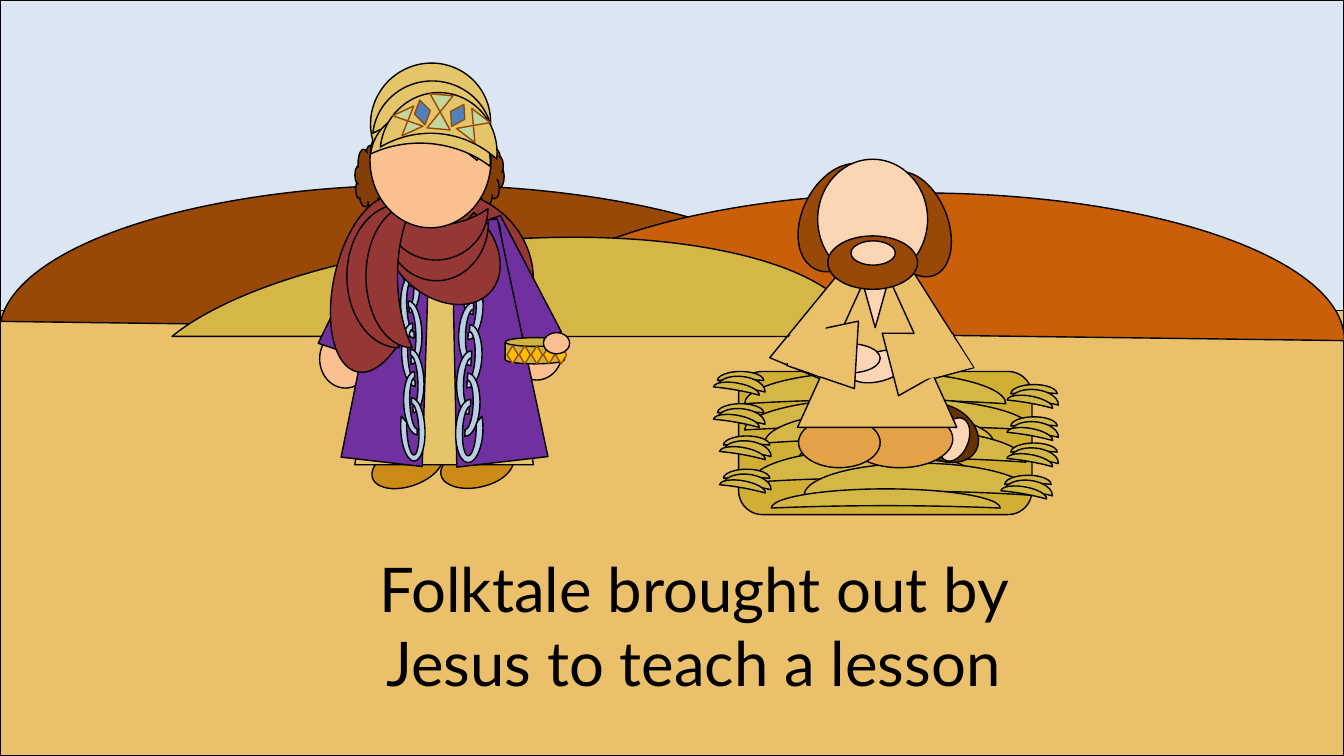
from dataclasses import dataclass

from pptx import Presentation
from pptx.dml.color import RGBColor
from pptx.enum.shapes import MSO_SHAPE
from pptx.enum.text import MSO_ANCHOR, MSO_AUTO_SIZE, PP_ALIGN
from pptx.util import Pt

PX = 9144  # 100 px to the inch
TITLE_ONLY = 5

RECT, ROUND_RECT = MSO_SHAPE.RECTANGLE, MSO_SHAPE.ROUNDED_RECTANGLE
OVAL, CHORD, PIE = MSO_SHAPE.OVAL, MSO_SHAPE.CHORD, MSO_SHAPE.PIE
MOON, CLOUD, ARC = MSO_SHAPE.MOON, MSO_SHAPE.CLOUD, MSO_SHAPE.BLOCK_ARC
TRAPEZOID, TRIANGLE = MSO_SHAPE.TRAPEZOID, MSO_SHAPE.ISOSCELES_TRIANGLE
DIAMOND, HOURGLASS = MSO_SHAPE.DIAMOND, MSO_SHAPE.FLOWCHART_COLLATE
DRUM = MSO_SHAPE.FLOWCHART_MAGNETIC_DISK


@dataclass(frozen=True)
class Theme:
    font: str = "Lato"
    title_size: int = 44
    line_width: int = 1
    ink: str = "000000"
    sky: str = "DCE6F2"
    sand: str = "EBC06B"
    brown: str = "984807"
    rust: str = "C96009"
    straw: str = "D5B747"
    rug: str = "D0AF34"
    curls: str = "843F06"
    shoe: str = "CC8B16"
    tan_skin: str = "FAC090"
    pale_skin: str = "FCD5B5"
    scarf: str = "953735"
    purple: str = "7030A0"
    gold: str = "E5C569"
    silver: str = "B9CDE5"
    green: str = "C3D69B"
    blue: str = "4F81BD"
    bowl: str = "CFB33D"
    amber: str = "FFC000"
    sandal: str = "663300"
    knee: str = "E4A148"


THEME = Theme()


def paint(group, box, kind, place, fill, turn=0, adjust=(), flip=False, line=THEME.ink):
    """Add one shape to the group; place is left, top, width, height within the box."""
    left, top, width, height = place
    shape = group.shapes.add_shape(
        kind, (box[0] + left) * PX, (box[1] + top) * PX, width * PX, height * PX)
    shape.shadow.inherit = False
    shape.rotation = turn
    for index, value in enumerate(adjust):
        shape.adjustments[index] = value
    if flip:
        shape.element.spPr.get_or_add_xfrm().set("flipH", "1")
    shape.fill.solid()
    shape.fill.fore_color.rgb = RGBColor.from_string(fill)
    if line:
        shape.line.color.rgb = RGBColor.from_string(line)
        shape.line.width = Pt(THEME.line_width)
    else:
        shape.line.fill.background()


def paint_all(group, box, parts):
    for kind, place, fill, *options in parts:
        paint(group, box, kind, place, fill, **(options[0] if options else {}))


def draw_desert(group, box):
    hill = {"turn": 90, "adjust": (54.91, 162)}
    paint_all(group, box, [
        (RECT, (0, 258, 1333, 492), THEME.sand),
        (RECT, (0, 0, 1333, 308), THEME.sky),
        (CHORD, (274, -91, 293, 842), THEME.brown, hill),
        (CHORD, (766, -83, 293, 842), THEME.rust, hill),
        (CHORD, (369, 4, 251, 720), THEME.straw, {"turn": 85.2, "adjust": (60.09, 162)}),
    ])


def draw_chain(group, box, left, height, mirrored):
    """Hang a chain of half links between two nearly closed ones."""
    links = [  # drop, drift, turn, start angle
        (0, 0, 92.6, 24.17), (26, 3, 272.6, 108), (51, -2, 92.6, 108), (77, 1, 272.6, 108),
        (99, -3, 92.6, 108), (125, -1, 272.6, 108), (173, -2, 272.6, 22.95), (147, -5, 92.6, 108),
    ]
    for drop, drift, turn, start in links:
        if mirrored:
            drift, turn = -drift, 360 - turn
        paint(group, box, ARC, (left + drift, 191 + drop, 63, height), THEME.silver,
              turn=turn, adjust=(start, 0, 0.25), flip=mirrored)


def draw_rich_man(group, box):
    fold = {"adjust": (0.68,)}
    flat_fold = {"turn": 270, **fold}
    hat_fold = {"turn": 95.9, **fold}
    paint_all(group, box, [
        (CLOUD, (52, 92, 35, 67), THEME.curls),
        (CLOUD, (165, 98, 35, 56), THEME.curls),
        (OVAL, (153, 377, 40, 73), THEME.shoe, {"turn": 77.7}),
        (OVAL, (84, 376, 40, 73), THEME.shoe, {"turn": 71.2}),
        (OVAL, (17, 277, 51, 58), THEME.tan_skin),
        (OVAL, (207, 269, 51, 58), THEME.tan_skin),
        (OVAL, (38, 138, 191, 178), THEME.scarf),
        (TRAPEZOID, (166, 166, 71, 129), THEME.purple, {"turn": 340.2}),
        (TRAPEZOID, (34, 176, 71, 129), THEME.purple, {"turn": 18.3}),
        (TRAPEZOID, (52, 172, 177, 239), THEME.gold, {"adjust": (0.19,)}),
        (TRAPEZOID, (139, 169, 91, 240), THEME.purple, {"turn": 353.4}),
    ])
    draw_chain(group, box, 136, 27, mirrored=False)
    paint(group, box, TRAPEZOID, (52, 167, 81, 242), THEME.purple, turn=6.6, flip=True)
    draw_chain(group, box, 76, 24, mirrored=True)
    paint_all(group, box, [
        (TRAPEZOID, (106, 171, 57, 17), THEME.tan_skin, {"turn": 180}),
        (PIE, (91, 132, 95, 129), THEME.scarf, {"turn": 311.6}),
        (MOON, (104, 148, 58, 103), THEME.scarf, flat_fold),
        (MOON, (107, 131, 51, 103), THEME.scarf, flat_fold),
        (PIE, (31, 143, 85, 178), THEME.scarf, {"turn": 12.5, "adjust": (30.58, 162)}),
        (MOON, (44, 153, 52, 142), THEME.scarf, fold),
        (MOON, (63, 153, 46, 142), THEME.scarf, fold),
        (OVAL, (67, 42, 120, 134), THEME.tan_skin),
        (PIE, (67, 13, 120, 118), THEME.gold, {"turn": 137.5, "adjust": (11.73, 156.8)}),
        (MOON, (103, 0, 58, 119), THEME.gold, hat_fold),
        (MOON, (104, 24, 51, 119), THEME.gold, hat_fold),
        (MOON, (108, 14, 60, 116), THEME.gold, hat_fold),
    ])
    hat_gems = [
        (HOURGLASS, (93, 59, 23, 22), THEME.green, 335.3),
        (HOURGLASS, (158, 62, 23, 25), THEME.green, 37.5),
        (HOURGLASS, (125, 44, 23, 34), THEME.green, 5.1),
        (DIAMOND, (111, 49, 16, 25), THEME.blue, 348.1),
        (DIAMOND, (146, 52, 16, 25), THEME.blue, 29.2),
    ]
    for kind, place, fill, turn in hat_gems:
        paint(group, box, kind, place, fill, turn=turn, line=THEME.brown)
    draw_bowl(group, (box[0] + 201, box[1] + 280))


def draw_bowl(group, box):
    paint(group, box, DRUM, (0, 5, 59, 26), THEME.bowl)
    for index in range(5):
        paint(group, box, DIAMOND, (2 + 12 * index, 13, 11, 18), THEME.amber, line=THEME.brown)
    paint(group, box, OVAL, (38, 0, 26, 21), THEME.tan_skin)


def draw_rug(group, box):
    stripes = [
        (152, -95, 32, 259), (165, -82, 32, 285), (156, -40, 32, 227), (188, -21, 32, 227),
        (143, -1, 32, 227), (195, 12, 32, 227), (169, 31, 19, 227),
    ]
    tassels = [(321, 13), (321, 45), (321, 71), (315, 103), (30, 0), (30, 32), (36, 64), (36, 97)]
    strands = [(0, 0, 9, 46, 90), (-1, 6, 13, 48, 95.8), (-3, 11, 8, 46, 100.2)]
    paint(group, box, ROUND_RECT, (107, -56, 142, 291), THEME.rug, turn=90)
    for place in stripes:
        paint(group, box, MOON, place, THEME.straw, turn=90, adjust=(0.88,))
    for left, top in tassels:
        for shift, drop, width, height, turn in strands:
            paint(group, box, MOON, (left + shift, top + drop, width, height), THEME.straw,
                  turn=turn, adjust=(0.88,))


def draw_kneeling_man(group, box):
    sleeve, cuff = (0.34,), (0.28,)
    paint_all(group, box, [
        (OVAL, (157, 254, 54, 53), THEME.sandal, {"turn": 298.2}),
        (OVAL, (159, 243, 54, 73), THEME.sandal, {"turn": 298.2}),
        (OVAL, (174, 272, 45, 28), THEME.pale_skin, {"turn": 291.5}),
        (TRAPEZOID, (32, 113, 101, 116), THEME.sand, {"turn": 22.8, "adjust": sleeve}),
        (TRAPEZOID, (96, 112, 106, 119), THEME.sand,
         {"turn": 344.6, "adjust": sleeve, "flip": True}),
        (OVAL, (90, 257, 105, 57), THEME.knee),
        (OVAL, (42, 264, 81, 50), THEME.knee),
        (TRIANGLE, (41, 100, 158, 174), THEME.sand),
        (OVAL, (102, 39, 109, 67), THEME.brown, {"turn": 68.3}),
        (OVAL, (27, 28, 114, 76), THEME.brown, {"turn": 116.7}),
        (OVAL, (92, 199, 61, 29), THEME.pale_skin, {"turn": 343.8}),
        (OVAL, (62, 191, 61, 29), THEME.pale_skin),
        (TRIANGLE, (94, 89, 48, 86), THEME.pale_skin, {"turn": 180}),
        (OVAL, (61, 8, 109, 119), THEME.pale_skin),
        (TRAPEZOID, (32, 166, 67, 68), THEME.sand, {"turn": 273.4, "adjust": cuff}),
        (TRAPEZOID, (134, 169, 64, 68), THEME.sand, {"turn": 75.4, "adjust": cuff}),
        (TRAPEZOID, (26, 157, 51, 59), THEME.sand,
         {"turn": 22.8, "adjust": sleeve, "line": None}),
        (TRAPEZOID, (146, 172, 64, 51), THEME.sand,
         {"turn": 345.9, "adjust": sleeve, "line": None}),
        (OVAL, (71, 84, 89, 53), THEME.brown, {"turn": 180}),
        (OVAL, (94, 89, 44, 24), THEME.pale_skin),
    ])


def place_title(slide, box, text):
    title = slide.shapes.title
    slide.shapes.element.append(title.element)  # in front of the scene
    for name, value in zip(("left", "top", "width", "height"), box):
        setattr(title, name, value * PX)
    frame = title.text_frame
    frame.text = text
    frame_format = {"word_wrap": True, "auto_size": MSO_AUTO_SIZE.SHAPE_TO_FIT_TEXT,
                    "vertical_anchor": MSO_ANCHOR.TOP}
    for name, value in frame_format.items():
        setattr(frame, name, value)
    paragraph = frame.paragraphs[0]
    paragraph.alignment = PP_ALIGN.CENTER
    font = paragraph.runs[0].font
    for name, value in {"name": THEME.font, "size": Pt(THEME.title_size)}.items():
        setattr(font, name, value)
    font.color.rgb = RGBColor.from_string(THEME.ink)


def main():
    presentation = Presentation()
    presentation.slide_width, presentation.slide_height = 1333 * PX, 750 * PX
    slide = presentation.slides.add_slide(presentation.slide_layouts[TITLE_ONLY])
    regions = [
        (draw_desert, (0, 0)), (draw_rich_man, (300, 50)),
        (draw_rug, (700, 350)), (draw_kneeling_man, (750, 150)),
    ]
    for draw, box in regions:
        draw(slide.shapes.add_group_shape(), box)
    place_title(slide, (342, 542, 692, 158), "Folktale brought out by Jesus to teach a lesson")
    presentation.save("out.pptx")


if __name__ == "__main__":
    main()
